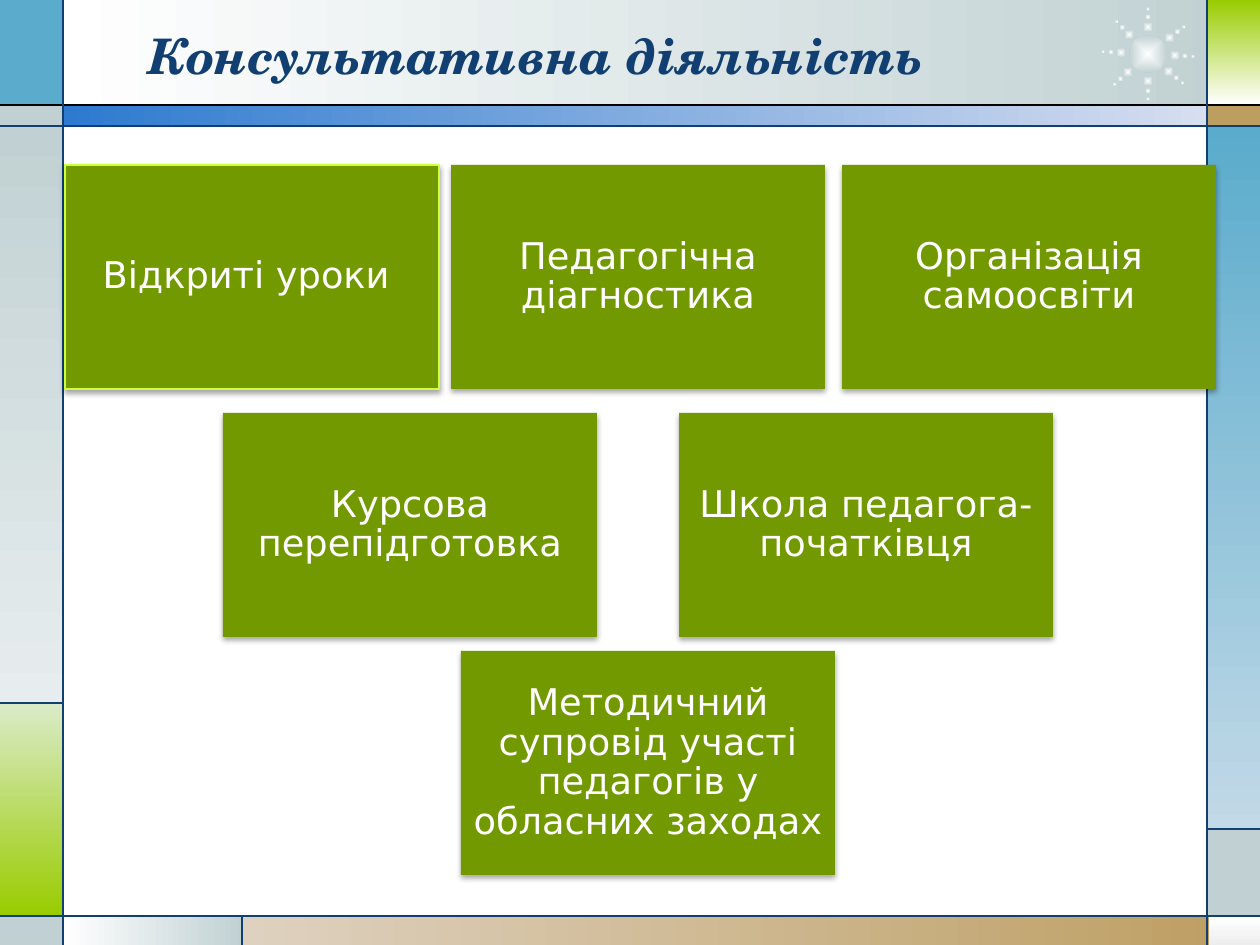
from math import cos, radians, sin
from typing import NamedTuple, Optional

from lxml import etree
from pptx import Presentation
from pptx.dml.color import RGBColor
from pptx.enum.shapes import MSO_CONNECTOR, MSO_SHAPE
from pptx.enum.text import MSO_ANCHOR, MSO_AUTO_SIZE, PP_ALIGN
from pptx.oxml import parse_xml
from pptx.oxml.ns import nsdecls, qn
from pptx.util import Emu, Pt

RECTANGLE, OVAL = MSO_SHAPE.RECTANGLE, MSO_SHAPE.OVAL
STRAIGHT = MSO_CONNECTOR.STRAIGHT
MIDDLE = MSO_ANCHOR.MIDDLE
LEFT, CENTER = PP_ALIGN.LEFT, PP_ALIGN.CENTER
NO_AUTOFIT = MSO_AUTO_SIZE.NONE

EMU_PER_PX = 914400 / 126
SLIDE_W, SLIDE_H = 1260, 945
HEADING_FONT, BODY_FONT = "TeX Gyre Schola", "DejaVu Sans"

WHITE = RGBColor(0xFF, 0xFF, 0xFF)
BLACK = RGBColor(0x00, 0x00, 0x00)
NAVY = RGBColor(0x11, 0x3F, 0x71)
SKY = RGBColor(0x5A, 0xAB, 0xCC)
PALE_SKY = RGBColor(0xC2, 0xD9, 0xE7)
MIST = RGBColor(0xC1, 0xD1, 0xD3)
PALE_MIST = RGBColor(0xE7, 0xED, 0xEE)
LIME = RGBColor(0x99, 0xCC, 0x00)
PALE_LIME = RGBColor(0xDB, 0xEB, 0xC9)
SAND = RGBColor(0xBD, 0x9E, 0x61)
PALE_SAND = RGBColor(0xDE, 0xD1, 0xBF)
BLUE = RGBColor(0x2D, 0x7A, 0xCF)
PALE_BLUE = RGBColor(0xD7, 0xDE, 0xF0)
PALE_GREY = RGBColor(0xED, 0xED, 0xED)
TILE_GREEN = RGBColor(0x73, 0x99, 0x00)
TILE_EDGE = RGBColor(0xCD, 0xFF, 0x3C)

ACROSS, DOWN = 0, 270  # counter-clockwise gradient angles
TILE_W, TILE_H, TILE_MARGIN = 374, 224, 11
SUN_X, SUN_Y, SUN_SIZE = 1148, 54, 38
RAY_ANGLES = (3, 40, 90, 138, 183, 226, 270, 323)
RAY_DOTS = ((27, 10), (37, 6), (45, 4))  # distance from centre, diameter


class Panel(NamedTuple):
    left: int
    top: int
    width: int
    height: int
    color: RGBColor
    end_color: Optional[RGBColor] = None
    angle: int = ACROSS


class Rule(NamedTuple):
    x1: int
    y1: int
    x2: int
    y2: int
    color: RGBColor = NAVY


class Tile(NamedTuple):
    left: int
    top: int
    label: str
    edge: Optional[RGBColor] = None


PANELS = (
    Panel(63, 0, 1168, 106, WHITE, MIST),
    Panel(0, 0, 63, 106, SKY),
    Panel(0, 105, 63, 21, MIST),
    Panel(0, 126, 63, 577, MIST, PALE_MIST, DOWN),
    Panel(0, 703, 63, 213, PALE_LIME, LIME, DOWN),
    Panel(0, 917, 63, 28, MIST),
    Panel(63, 916, 180, 29, WHITE, MIST),
    Panel(242, 916, 1018, 29, PALE_SAND, SAND),
    Panel(1209, 917, 51, 28, WHITE, PALE_GREY, DOWN),
    Panel(1208, 829, 52, 88, MIST),
    Panel(1207, 126, 53, 703, SKY, PALE_SKY, DOWN),
    Panel(1207, 105, 53, 21, SAND),
    Panel(1208, 0, 52, 105, LIME, WHITE, DOWN),
    Panel(63, 105, 1145, 21, BLUE, PALE_BLUE),
)
RULES = (
    Rule(0, 105, SLIDE_W, 105, BLACK),
    Rule(0, 126, SLIDE_W, 126),
    Rule(0, 916, SLIDE_W, 916),
    Rule(63, 0, 63, SLIDE_H),
    Rule(1207, 0, 1207, SLIDE_H),
    Rule(0, 703, 63, 703),
    Rule(242, 916, 242, SLIDE_H),
    Rule(1207, 829, SLIDE_W, 829),
)
TOP_ROW, MIDDLE_ROW, BOTTOM_ROW = 165, 413, 651
TILES = (
    Tile(65, TOP_ROW, "Відкриті уроки ", TILE_EDGE),
    Tile(451, TOP_ROW, "Педагогічна діагностика"),
    Tile(842, TOP_ROW, "Організація самоосвіти"),
    Tile(223, MIDDLE_ROW, "Курсова перепідготовка"),
    Tile(679, MIDDLE_ROW, "Школа педагога-початківця"),
    Tile(461, BOTTOM_ROW, "Методичний супровід участі педагогів у обласних заходах"),
)


def px(length: float) -> Emu:
    return Emu(round(length * EMU_PER_PX))


def add_plain_shape(slide, kind, left: float, top: float, width: int, height: int):
    shape = slide.shapes.add_shape(kind, px(left), px(top), px(width), px(height))
    shape.shadow.inherit = False
    shape.line.fill.background()
    return shape


def fill_gradient(shape, start: RGBColor, end: RGBColor, angle: int) -> None:
    shape.fill.gradient()
    shape.fill.gradient_angle = angle
    for stop, color in zip(shape.fill.gradient_stops, (start, end)):
        stop.color.rgb = color


def draw_panel(slide, panel: Panel) -> None:
    shape = add_plain_shape(slide, RECTANGLE, *panel[:4])
    if panel.end_color is None:
        shape.fill.solid()
        shape.fill.fore_color.rgb = panel.color
    else:
        fill_gradient(shape, panel.color, panel.end_color, panel.angle)


def draw_glow(slide, center_x: float, center_y: float, size: int) -> None:
    """Draw a disc that is white in the middle and fades outwards."""
    disc = add_plain_shape(slide, OVAL, center_x - size / 2, center_y - size / 2, size, size)
    fill_gradient(disc, WHITE, MIST, ACROSS)
    gradient = disc._element.spPr.find(qn("a:gradFill"))
    gradient.replace(gradient.find(qn("a:lin")), parse_xml(
        f'<a:path {nsdecls("a")} path="shape">'
        '<a:fillToRect l="50000" t="50000" r="50000" b="50000"/></a:path>'))


def draw_sun(slide) -> None:
    draw_glow(slide, SUN_X, SUN_Y, SUN_SIZE)
    for angle in map(radians, RAY_ANGLES):
        for distance, size in RAY_DOTS:
            draw_glow(slide, SUN_X + distance * cos(angle), SUN_Y + distance * sin(angle), size)


def draw_rule(slide, rule: Rule) -> None:
    connector = slide.shapes.add_connector(STRAIGHT, *map(px, rule[:4]))
    connector.line.color.rgb = rule.color
    connector.line.width = Pt(0.75)
    etree.SubElement(connector._element.spPr, qn("a:effectLst"))


def add_run(paragraph, text: str, font_name: str, size: int, color: RGBColor):
    run = paragraph.add_run()
    run.text = text
    run.font.name = font_name
    run.font.size = Pt(size)
    run.font.color.rgb = color
    return run


def write_heading(slide, text: str) -> None:
    heading = slide.shapes.title
    slide.shapes._spTree.append(heading._element)  # in front of the frame
    heading.left, heading.top, heading.width, heading.height = map(px, (136, 16, 924, 78))
    frame = heading.text_frame
    frame.auto_size = NO_AUTOFIT
    frame.vertical_anchor = MIDDLE
    frame.paragraphs[0].alignment = LEFT
    run = add_run(frame.paragraphs[0], text, HEADING_FONT, 28, NAVY)
    run.font.bold = run.font.italic = True


def draw_tile(slide, tile: Tile) -> None:
    shape = add_plain_shape(slide, RECTANGLE, tile.left, tile.top, TILE_W, TILE_H)
    shape.fill.solid()
    shape.fill.fore_color.rgb = TILE_GREEN
    if tile.edge is not None:
        shape.line.color.rgb = tile.edge
        shape.line.width = Pt(0.75)
    shape._element.spPr.find(qn("a:effectLst")).append(parse_xml(
        f'<a:outerShdw {nsdecls("a")} blurRad="40000" dist="23000" dir="5400000" rotWithShape="0">'
        f'<a:srgbClr val="{BLACK}"><a:alpha val="35000"/></a:srgbClr></a:outerShdw>'))
    frame = shape.text_frame
    frame.word_wrap = True
    frame.vertical_anchor = MIDDLE
    frame.margin_left = frame.margin_right = px(TILE_MARGIN)
    frame.margin_top = frame.margin_bottom = px(TILE_MARGIN)
    paragraph = frame.paragraphs[0]
    paragraph.alignment = CENTER
    paragraph.line_spacing = 0.9
    add_run(paragraph, tile.label, BODY_FONT, 21, WHITE)


def main() -> None:
    presentation = Presentation()
    presentation.slide_width, presentation.slide_height = px(SLIDE_W), px(SLIDE_H)
    slide = presentation.slides.add_slide(presentation.slide_layouts[5])
    for panel in PANELS:
        draw_panel(slide, panel)
    draw_sun(slide)
    for rule in RULES:
        draw_rule(slide, rule)
    write_heading(slide, "Консультативна діяльність")
    for tile in TILES:
        draw_tile(slide, tile)
    presentation.save("out.pptx")


if __name__ == "__main__":
    main()
